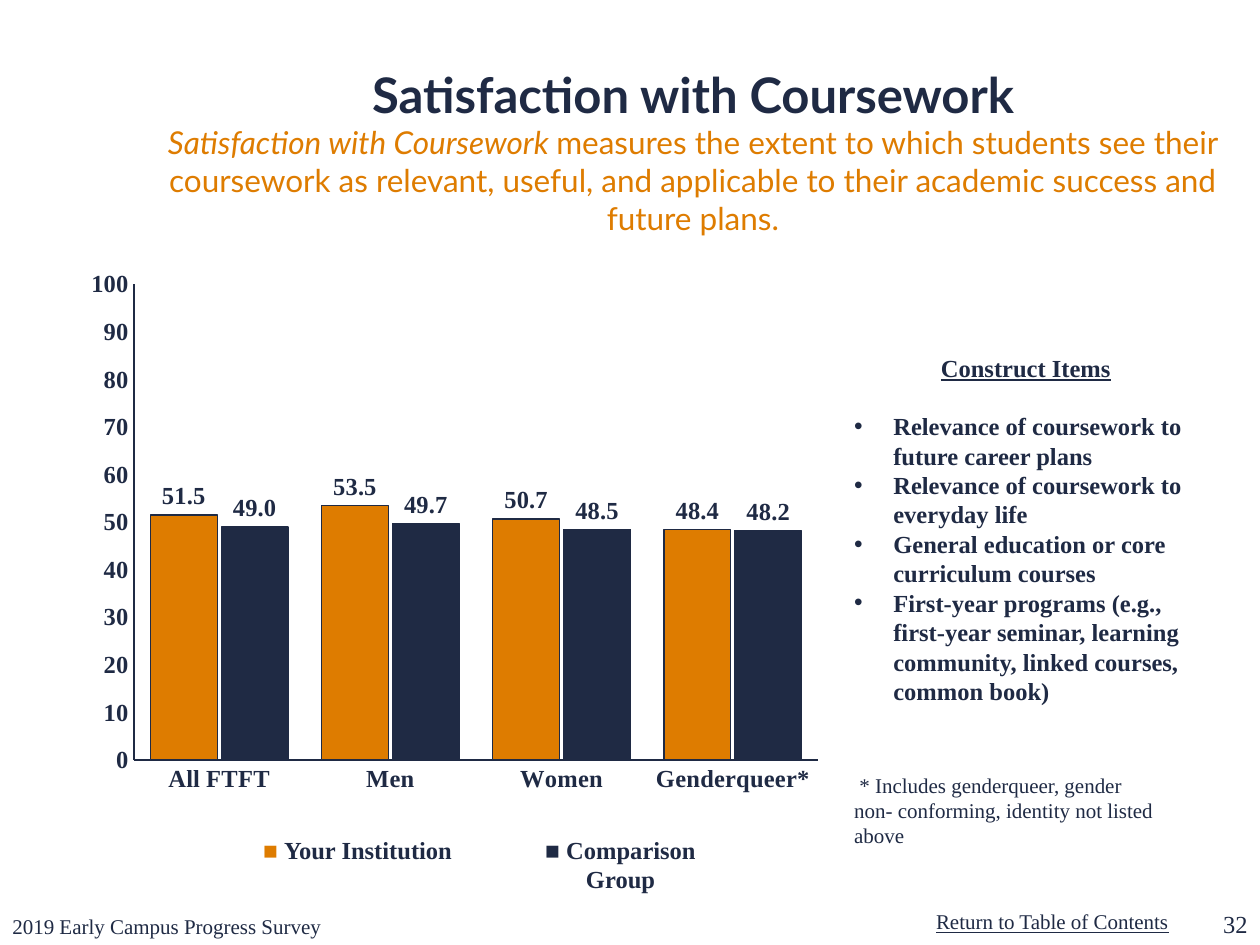
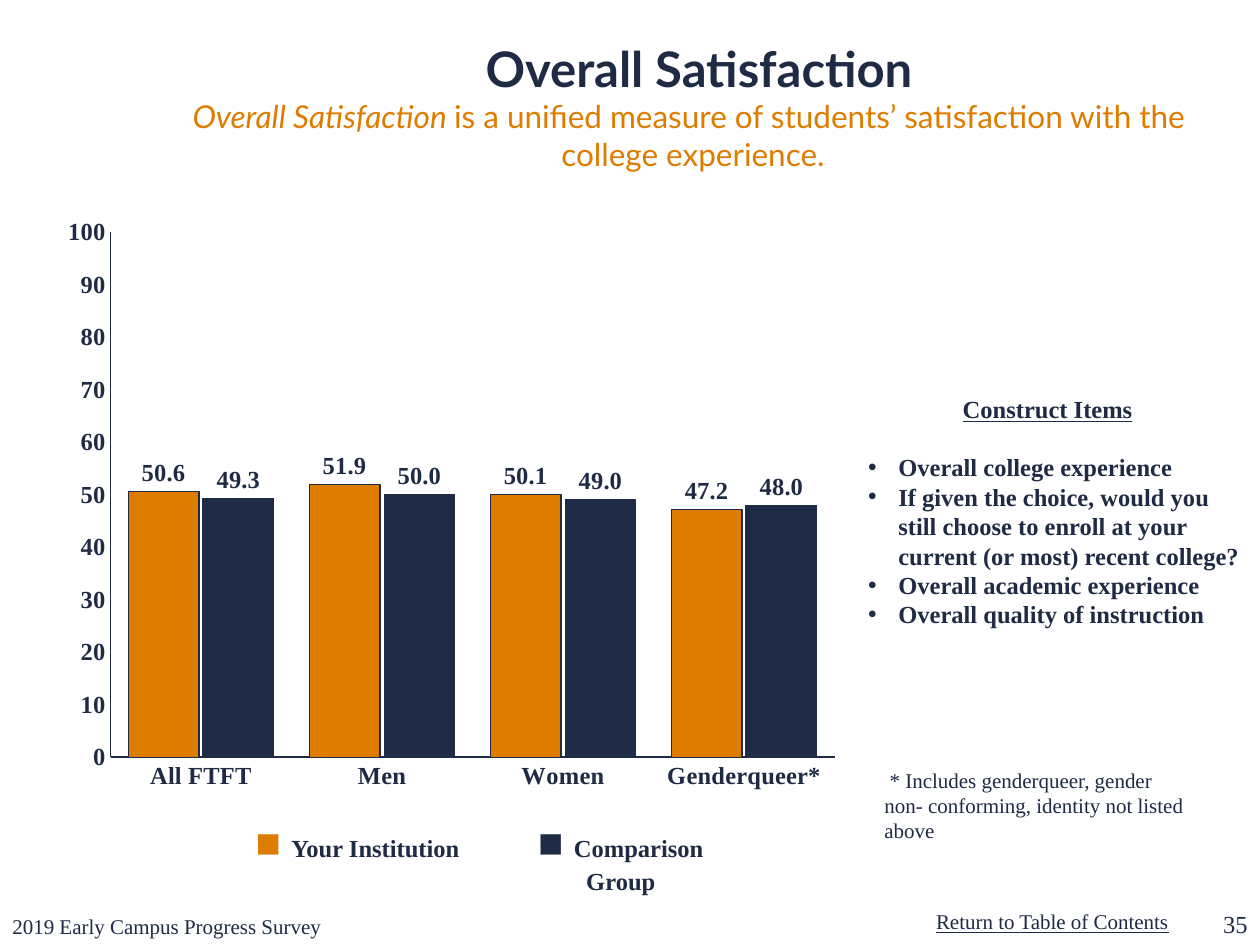
"""Build two survey slides, each comparing construct scores in a column chart."""
from lxml.etree import SubElement
from pptx import Presentation
from pptx.chart.data import CategoryChartData
from pptx.dml.color import RGBColor
from pptx.enum.chart import XL_CHART_TYPE as ChartType, XL_LABEL_POSITION as LabelPosition
from pptx.enum.chart import XL_TICK_MARK as TickMark
from pptx.enum.text import MSO_ANCHOR as Anchor, MSO_AUTO_SIZE as AutoSize, PP_ALIGN as Align
from pptx.oxml.ns import qn
from pptx.util import Cm, Pt

NAVY, ORANGE = "1F2A44", "DE7C00"
SERIF, SANS = "Times New Roman", "Lato"
GROUPS = ["All FTFT", "Men", "Women", "Genderqueer*"]
NOTE = " * Includes genderqueer, gender non- conforming, identity not listed above"


def color(value):
    """Turn a hex string into a colour."""
    return RGBColor.from_string(value)


def style(font, size, shade=NAVY, name=SERIF, bold=False):
    """Set the main properties of a font."""
    font.size, font.name, font.bold = Pt(size), name, bold
    font.color.rgb = color(shade)


def add_span(para, text, size, shade=NAVY, name=SERIF, bold=False):
    """Add a run, turning newlines into line breaks, and return its last font."""
    for index, piece in enumerate(text.split("\n")):
        if index:
            para.add_line_break()
        span = para.add_run()
        span.text = piece
        style(span.font, size, shade, name, bold)
    return span.font


def add_box(page, place, align=Align.LEFT, anchor=Anchor.TOP, wrap=True):
    """Add an empty text box and return its frame."""
    frame = page.shapes.add_textbox(*map(Cm, place)).text_frame
    frame.word_wrap, frame.vertical_anchor = wrap, anchor
    frame.paragraphs[0].alignment = align
    return frame


def set_title(page, top, heading, term, meaning):
    """Fill the title with a heading and the definition of its term."""
    title = page.shapes.title
    title.left, title.top, title.width, title.height = map(Cm, (2.54, top, 22.86, 3.18))
    frame = title.text_frame
    frame.auto_size, frame.vertical_anchor = AutoSize.NONE, Anchor.TOP
    para = frame.paragraphs[0]
    para.alignment = Align.CENTER
    add_span(para, heading, 28, name=SANS, bold=True)
    para.add_line_break()
    add_span(para, term, 18, ORANGE, SANS).italic = True
    add_span(para, meaning, 18, ORANGE, SANS)


def add_footer(page, number):
    """Add the survey name, the contents label and the page number."""
    contents = add_box(page, (18.62, 18.2, 5.26, 0.76), wrap=False)
    add_span(contents.paragraphs[0], "Return to Table of Contents", 12).underline = True
    survey = add_box(page, (0, 17.78, 8.05, 1.27), anchor=Anchor.BOTTOM)
    add_span(survey.paragraphs[0], "2019 Early Campus Progress Survey", 12)
    corner = add_box(page, (23.29, 17.78, 2.11, 1.27), Align.RIGHT, Anchor.BOTTOM)
    add_span(corner.paragraphs[0], number, 14)


def set_plot_area(chart, fractions):
    """Fix the inner plot area as fractions of the chart."""
    plot_area = chart.plots[0]._element.getparent()
    layout = plot_area.find(qn("c:layout"))
    if layout is None:
        layout = plot_area.makeelement(qn("c:layout"))
        plot_area.insert(0, layout)
    manual = SubElement(layout, qn("c:manualLayout"))
    settings = [("layoutTarget", "inner"), ("xMode", "edge"), ("yMode", "edge")]
    settings += zip("xywh", fractions)
    for tag, value in settings:
        SubElement(manual, qn(f"c:{tag}")).set("val", str(value))


def add_scores(page, place, plot_area, institution, comparison):
    """Add the clustered column chart of construct scores."""
    data = CategoryChartData(number_format="0.0")
    data.categories = GROUPS
    data.add_series("Series 1", institution)
    data.add_series("Series 2", comparison)
    frame = page.shapes.add_chart(ChartType.COLUMN_CLUSTERED, *map(Cm, place), data)
    chart = frame.chart
    chart.has_legend = chart.has_title = False
    style(chart.font, 14, bold=True)
    for axis in (chart.category_axis, chart.value_axis):
        axis.major_tick_mark = axis.minor_tick_mark = TickMark.NONE
        axis.has_major_gridlines = False
        axis.format.line.color.rgb = color(NAVY)
        axis.format.line.width = Pt(1)
        style(axis.tick_labels.font, 14, bold=True)
    scale = chart.value_axis
    scale.minimum_scale, scale.maximum_scale, scale.major_unit = 0, 100, 10
    scale.tick_labels.number_format = "#,##0"
    scale.tick_labels.number_format_is_linked = False
    plot = chart.plots[0]
    plot.gap_width, plot.overlap, plot.vary_by_categories = 50, -6, False
    for series, shade in zip(plot.series, (ORANGE, NAVY)):
        series.format.fill.solid()
        series.format.fill.fore_color.rgb = color(shade)
        series.format.line.color.rgb = color(NAVY)
        series.format.line.width = Pt(0.75)
        labels = series.data_labels
        labels.show_value, labels.position = True, LabelPosition.OUTSIDE_END
        labels.number_format, labels.number_format_is_linked = "0.0", False
        style(labels.font, 14, bold=True)
    set_plot_area(chart, plot_area)


def add_key(page, place, label, shade, marker_size, wrap=False):
    """Add a legend entry with a coloured square."""
    frame = add_box(page, place, Align.CENTER, wrap=wrap)
    if wrap:
        frame.margin_left = frame.margin_right = Cm(0.5)
    para = frame.paragraphs[0]
    add_span(para, "■ ", marker_size, shade, bold=True)
    add_span(para, label, 14, bold=True)


def add_items(page, place, indent, hanging, items):
    """Add the bulleted list of construct items under its heading."""
    frame = add_box(page, place, Align.CENTER)
    heading = frame.paragraphs[0]
    add_span(heading, "Construct Items", 14, bold=True).underline = True
    heading.space_after = Pt(16.5)
    for item in items:
        para = frame.add_paragraph()
        properties = para._p.get_or_add_pPr()
        properties.set("marL", str(Cm(indent)))
        properties.set("indent", str(-Cm(hanging)))
        SubElement(properties, qn("a:buFont")).set("typeface", "Arial")
        SubElement(properties, qn("a:buChar")).set("char", "•")
        add_span(para, item, 14, bold=True)


def add_note(page, left, top):
    """Add the note that explains the starred group."""
    frame = add_box(page, (left, top, 6.78, 1.27))
    add_span(frame.paragraphs[0], NOTE, 12)


def add_coursework(page):
    """Fill the slide on satisfaction with coursework."""
    set_title(page, 1.17, "Satisfaction with Coursework", "Satisfaction with Coursework ",
              "measures the extent to which students see their coursework as relevant, "
              "useful, and applicable to their academic success and future plans.")
    add_footer(page, "32")
    add_scores(page, (0.43, 4.45, 24.61, 12.47), (0.092, 0.103, 0.561, 0.769),
               (51.5, 53.5, 50.7, 48.4), (49.0, 49.7, 48.5, 48.2))
    add_key(page, (5, 16.71, 4.42, 0.86), "Your Institution ", ORANGE, 14)
    add_key(page, (10.01, 16.71, 5, 0.86), "Comparison Group", NAVY, 14, wrap=True)
    add_items(page, (16.97, 6.99, 7.42, 7.42), 0.79, 0.79, [
        "Relevance of coursework to future career plans",
        "Relevance of coursework to everyday life",
        "General education or core curriculum courses",
        "First-year programs (e.g., first-year seminar, learning community, "
        "linked courses, common book)"])
    add_note(page, 16.97, 15.44)


def add_overall(page):
    """Fill the slide on overall satisfaction."""
    set_title(page, 0.64, " Overall Satisfaction", "Overall Satisfaction ",
              "is a unified measure of students’ satisfaction with the \ncollege experience.")
    add_footer(page, "35")
    add_scores(page, (0.15, 3.18, 24.74, 13.77), (0.084, 0.109, 0.59, 0.769),
               (50.6, 51.9, 50.1, 47.2), (49.3, 50.0, 49.0, 48.0))
    add_key(page, (4.85, 16.31, 4.72, 1.27), "Your Institution ", ORANGE, 24)
    add_key(page, (9.86, 16.31, 5.31, 1.27), "Comparison Group", NAVY, 24, wrap=True)
    add_items(page, (16.89, 7.82, 8.46, 5.05), 0.97, 0.61, [
        "Overall college experience",
        "If given the choice, would you still choose to enroll at your current "
        "(or most) recent college?",
        "Overall academic experience",
        "Overall quality of instruction"])
    add_note(page, 17.58, 15.34)


def main():
    """Build and save the deck."""
    deck = Presentation()
    deck.slide_width, deck.slide_height = Cm(25.4), Cm(19.05)
    for fill_page in (add_coursework, add_overall):
        fill_page(deck.slides.add_slide(deck.slide_layouts[5]))
    deck.save("out.pptx")


if __name__ == "__main__":
    main()
